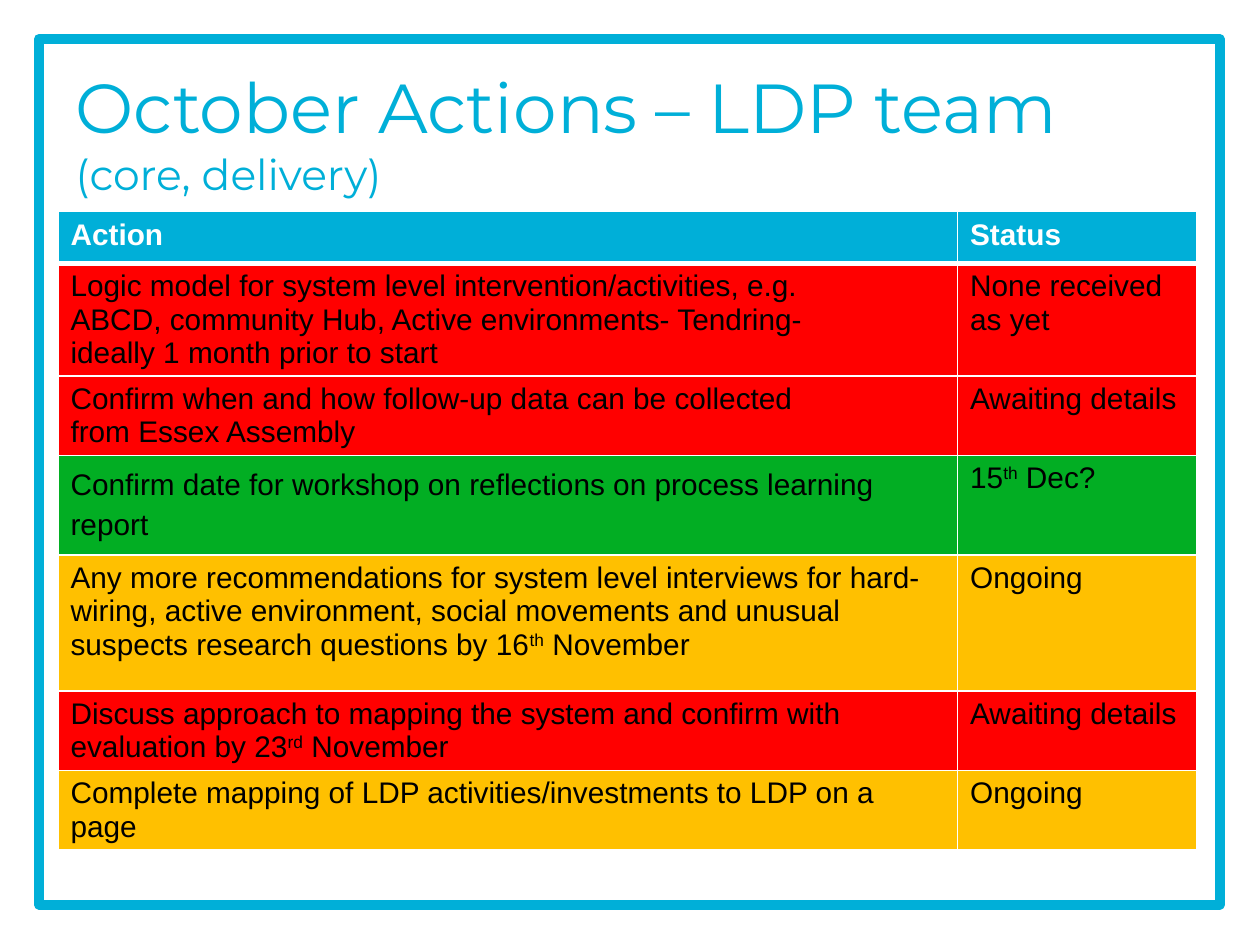
"""Build the October actions slide with its colour-coded status table."""
from dataclasses import dataclass

from lxml import etree
from pptx import Presentation
from pptx import util as u
from pptx.dml.color import RGBColor
from pptx.enum import shapes, text
from pptx.oxml import ns


@dataclass(frozen=True)
class Theme:
    blue: str = "00AFD8"
    white: str = "FFFFFF"
    black: str = "000000"
    red: str = "FF0000"
    green: str = "02AE23"
    amber: str = "FFC000"
    title_font: str = "Montserrat"
    body_font: str = "Arial"
    title_size: float = 39.6
    subtitle_size: float = 24.3
    body_size: float = 17


THEME = Theme()
HARD_SPACE = chr(160)
COLUMN_WIDTHS = (7.14, 1.9)
HEADINGS = ("Action", "Status")
HEADING_HEIGHT = 0.41
ACTIONS = (
    ("Logic model for system level~intervention/activities, e.g. "
     "ABCD,~community~Hub, Active environments- Tendring- ideally~1~month prior to start",
     "None received as yet", THEME.red, 0.89),
    ("Confirm when and how follow-up data can be collected from~Essex Assembly",
     "Awaiting details", THEME.red, 0.63),
    ("Confirm date for workshop on reflections on process learning report",
     "15^th^ Dec?", THEME.green, 0.79),
    ("Any more recommendations for system level interviews for hard-wiring, active "
     "environment, social movements and unusual suspects research questions by "
     "16^th^ November", "Ongoing", THEME.amber, 1.08),
    ("Discuss approach to mapping the system and confirm with evaluation by "
     "23^rd^ November", "Awaiting details", THEME.red, 0.63),
    ("Complete mapping of LDP activities/investments to LDP on a page",
     "Ongoing", THEME.amber, 0.63),
)


def write_text(paragraph, content, *, size=THEME.body_size, font=THEME.body_font,
               color=THEME.black, bold=False):
    """Add formatted runs; ~ is a hard space and ^...^ is superscript."""
    for index, part in enumerate(content.replace("~", HARD_SPACE).split("^")):
        run = paragraph.add_run()
        run.text = part
        run.font.size = u.Pt(size)
        run.font.name = font
        run.font.bold = bold
        run.font.color.rgb = RGBColor.from_string(color)
        if index % 2:
            run.font._element.set("baseline", "30000")


def add_frame(slide):
    """Draw the blue outline around the slide."""
    shape = slide.shapes.add_shape(shapes.MSO_SHAPE.RECTANGLE, u.Inches(0.31),
                                   u.Inches(0.31), u.Inches(9.37), u.Inches(6.87))
    shape.shadow.inherit = False
    shape.fill.background()
    shape.line.color.rgb = RGBColor.from_string(THEME.blue)
    shape.line.width = u.Pt(5.67)


def add_title(slide, title, subtitle):
    """Fill the title placeholder with a heading and a smaller second line."""
    shape = slide.shapes.title
    shape.left, shape.top = u.Inches(0.5), u.Inches(0.42)
    shape.width, shape.height = u.Inches(9), u.Inches(1.25)
    frame = shape.text_frame
    frame.word_wrap = True
    frame.auto_size = text.MSO_AUTO_SIZE.NONE
    frame.vertical_anchor = text.MSO_ANCHOR.MIDDLE
    paragraph = frame.paragraphs[0]
    paragraph.alignment = text.PP_ALIGN.LEFT
    look = {"font": THEME.title_font, "color": THEME.blue}
    write_text(paragraph, title, size=THEME.title_size, **look)
    paragraph.add_line_break()
    write_text(paragraph, subtitle, size=THEME.subtitle_size, **look)


def set_borders(cell, **widths):
    """Give the cell white borders with widths in points by side."""
    properties = cell._tc.get_or_add_tcPr()
    for side, width in widths.items():
        line = etree.SubElement(properties, ns.qn(f"a:ln{side}"), w=str(u.Pt(width)))
        fill = etree.SubElement(line, ns.qn("a:solidFill"))
        etree.SubElement(fill, ns.qn("a:srgbClr"), val=THEME.white)


def fill_cell(cell, content, fill, *, top=1, bottom=1, **look):
    """Write one table cell with its fill and borders."""
    set_borders(cell, L=1, R=1, T=top, B=bottom)
    cell.fill.solid()
    cell.fill.fore_color.rgb = RGBColor.from_string(fill)
    write_text(cell.text_frame.paragraphs[0], content, **look)


def add_actions(slide):
    """Add the table of actions and their status."""
    heights = [HEADING_HEIGHT] + [action[-1] for action in ACTIONS]
    table = slide.shapes.add_table(
        len(heights), len(COLUMN_WIDTHS), u.Inches(0.46), u.Inches(1.68),
        u.Inches(sum(COLUMN_WIDTHS)), u.Inches(sum(heights))).table
    for column, width in zip(table.columns, COLUMN_WIDTHS):
        column.width = u.Inches(width)
    for row, height in zip(table.rows, heights):
        row.height = u.Inches(height)
    for column, heading in enumerate(HEADINGS):
        fill_cell(table.cell(0, column), heading, THEME.blue, bottom=3,
                  color=THEME.white, bold=True)
    for row, (action, status, fill, _) in enumerate(ACTIONS, 1):
        for column, content in enumerate((action, status)):
            fill_cell(table.cell(row, column), content, fill, top=3 if row == 1 else 1)
    workshop = table.cell(3, 0).text_frame.paragraphs[0]
    workshop.line_spacing = 1.2
    workshop.space_after = u.Pt(6)


def main():
    """Build and save the slide."""
    presentation = Presentation()
    presentation.slide_width, presentation.slide_height = u.Inches(10), u.Inches(7.5)
    slide = presentation.slides.add_slide(presentation.slide_layouts[5])
    add_frame(slide)
    add_title(slide, "October Actions – LDP team", "(core, delivery)")
    add_actions(slide)
    presentation.save("out.pptx")


if __name__ == "__main__":
    main()
